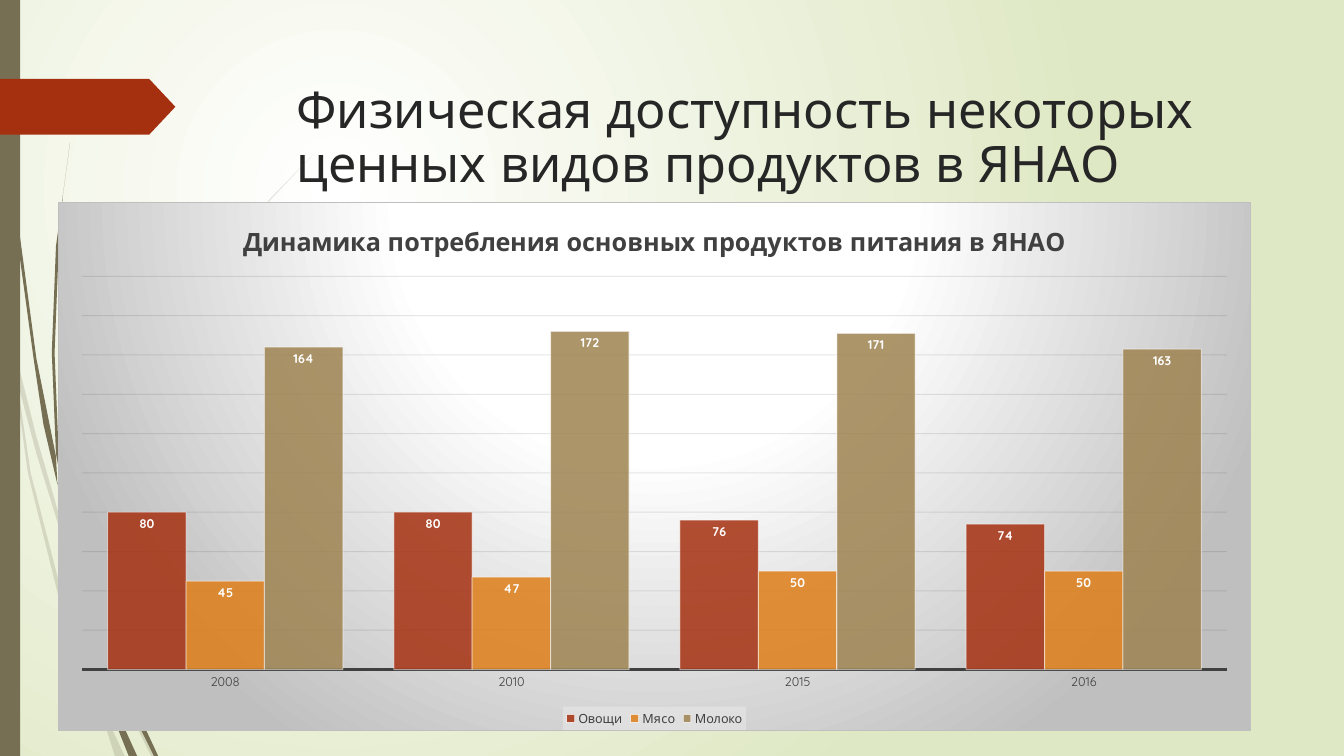
from lxml import etree
from pptx import Presentation
from pptx.chart.data import CategoryChartData
from pptx.dml.color import RGBColor
from pptx.enum.chart import (XL_CHART_TYPE as ChartType, XL_LABEL_POSITION as LabelPos,
                             XL_LEGEND_POSITION as LegendPos, XL_TICK_MARK as TickMark)
from pptx.enum.shapes import MSO_SHAPE as Preset
from pptx.enum.text import MSO_ANCHOR as Anchor, MSO_AUTO_SIZE as AutoSize, PP_ALIGN as Align
from pptx.oxml import parse_xml
from pptx.oxml.ns import nsdecls, qn
from pptx.util import Pt

FONT = "Quicksand"
COLORS = {
    "white": "FFFFFF", "meadow": "DFE8C4", "stem": "766F54", "arrow": "A53010",
    "title": "262626", "text": "404040", "grid": "0D0D0D", "panel": "BFBFBF",
    "legend": "F2F2F2", "vegetables": "A53010", "meat": "DE7E18", "milk": "9F8351",
}
YEARS = ["2008", "2010", "2015", "2016"]
PRODUCTS = [
    ("Овощи", (80, 80, 76, 74), "vegetables"),
    ("Мясо", (45, 47, 50, 50), "meat"),
    ("Молоко", (164, 172, 171, 163), "milk"),
]
PALE_STEMS = [
    [(0, 203), (6.5, 232), (8, 252), (0, 215)],
    [(10, 248), (26, 312), (44.5, 374), (61, 422), (60.5, 431), (42, 376), (26, 323.5),
     (12, 271)],
    [(63.5, 429), (66, 437), (91.5, 498), (111.5, 540), (108, 540), (88.5, 500),
     (63.5, 439)],
    [(8, 252), (12, 271), (22, 338), (50.5, 446), (67, 492), (72.5, 514), (66, 499),
     (47, 447), (20, 338)],
    [(60.5, 431), (63.5, 439), (65.5, 465), (74, 508), (89, 540), (82, 540), (67, 492)],
    [(61, 422), (77, 332), (114, 250.5), (164, 175.5), (193, 142), (224.5, 110),
     (193, 142.6), (165, 176.5), (115, 251.5), (79, 332.5), (63.5, 420.5)],
]
DARK_STEMS = [
    [(2.5, 0), (2.9, 34.5), (5.8, 78.5), (13.7, 167), (26, 255.5), (39.6, 326),
     (41, 346), (31, 303), (23.8, 255.5), (12.2, 168), (5, 79), (2.2, 0)],
    [(79, 461.5), (81.5, 467.5), (98, 508.5), (113, 540), (109.5, 540), (95, 510),
     (80, 472.5)],
    [(41, 343.5), (46, 363.5), (52, 400.5), (70.5, 473), (79, 497.5), (84, 520),
     (80, 510), (67, 474.5), (49, 401)],
    [(43, 340), (41.8, 326), (38.9, 251.5), (41.8, 176.5), (45.4, 139), (50.4, 101.5),
     (44.6, 139), (40.3, 176.5), (37.4, 251.5), (39.6, 323.5)],
    [(76.3, 464.5), (80, 472.5), (87.8, 517.5), (98, 540), (91.5, 540), (84, 520),
     (79, 497.5)],
]


def rgb(name):
    return RGBColor.from_string(COLORS[name])


def paint(fill, color):
    fill.solid()
    fill.fore_color.rgb = rgb(color)


def set_opacity(element, percent):
    for color in element.iter(qn("a:srgbClr")):
        etree.SubElement(color, qn("a:alpha"), val=str(percent * 1000))


def style_font(font, **values):
    font.name = FONT
    font.color.rgb = rgb(values.pop("color"))
    for name, value in values.items():
        setattr(font, name, value)


def radial_gradient(stops, focus):
    """Circular a:gradFill; focus holds left, top, right, bottom in percent."""
    colors = "".join(f'<a:gs pos="{at * 1000}"><a:srgbClr val="{COLORS[name]}"/></a:gs>'
                     for at, name in stops)
    sides = " ".join(f'{side}="{value * 1000}"' for side, value in zip("ltrb", focus))
    return (f'<a:gradFill {nsdecls("a")} rotWithShape="1"><a:gsLst>{colors}</a:gsLst>'
            f'<a:path path="circle"><a:fillToRect {sides}/></a:path></a:gradFill>')


def fill_background(slide):
    paint(slide.background.fill, "white")
    solid = next(slide.element.iter(qn("p:bgPr"))).find(qn("a:solidFill"))
    gradient = radial_gradient([(0, "white"), (100, "meadow")], (50, 50, 100, 100))
    solid.getparent().replace(solid, parse_xml(gradient))


def finish(shape, color, opacity=100):
    shape.shadow.inherit = False
    paint(shape.fill, color)
    shape.line.fill.background()
    if opacity < 100:
        set_opacity(shape.element.spPr, opacity)


def draw_side_decor(slide, left, top, height):
    shapes = slide.shapes
    for stems, opacity in ((PALE_STEMS, 20), (DARK_STEMS, 100)):
        for (start_x, start_y), *outline in stems:
            builder = shapes.build_freeform(start_x, start_y, scale=Pt(1))
            builder.add_line_segments(outline, close=True)
            finish(builder.convert_to_shape(Pt(left), Pt(top)), "stem", opacity)
    bar = shapes.add_shape(Preset.RECTANGLE, Pt(left), Pt(top), Pt(14.4), Pt(height))
    finish(bar, "stem")
    arrow = shapes.add_shape(Preset.PENTAGON, Pt(left), Pt(top + 56.4), Pt(125.3), Pt(39.8))
    arrow.adjustments[0] = 0.47
    finish(arrow, "arrow")


def write_title(slide, left, top, width, height):
    title = slide.shapes.title
    for side, value in dict(left=left, top=top, width=width, height=height).items():
        setattr(title, side, Pt(value))
    frame = title.text_frame
    frame.text = "Физическая доступность некоторых ценных видов продуктов в ЯНАО"
    for name, value in dict(word_wrap=True, auto_size=AutoSize.NONE,
                            vertical_anchor=Anchor.MIDDLE).items():
        setattr(frame, name, value)
    heading = frame.paragraphs[0]
    heading.alignment = Align.LEFT
    heading.line_spacing = 0.9
    style_font(heading.runs[0].font, size=Pt(36), color="title")


def style_axes(chart):
    years, amounts = chart.category_axis, chart.value_axis
    years.major_tick_mark = TickMark.NONE
    style_font(years.tick_labels.font, size=Pt(9), color="text")
    years.format.line.width = Pt(1.5)
    years.format.line.color.rgb = rgb("text")
    for name, value in dict(minimum_scale=0, maximum_scale=200, major_unit=20,
                            has_major_gridlines=True, visible=False).items():
        setattr(amounts, name, value)
    grid = amounts.major_gridlines.format.line
    grid.width = Pt(0.75)
    grid.color.rgb = rgb("grid")
    set_opacity(next(chart.element.iter(qn("c:majorGridlines"))), 10)


def style_bars(chart):
    plot = chart.plots[0]
    plot.gap_width, plot.overlap, plot.vary_by_categories = 65, 0, False
    series_xml = list(chart.element.iter(qn("c:ser")))
    for bars, bars_xml, (_, _, color) in zip(plot.series, series_xml, PRODUCTS):
        paint(bars.format.fill, color)
        look = bars_xml.find(qn("c:spPr"))
        set_opacity(look, 85)
        outline = bars.format.line
        outline.width = Pt(0.75)
        outline.color.rgb = rgb("white")
        set_opacity(look.find(qn("a:ln")), 50)
        labels = bars.data_labels
        labels.show_value = True
        labels.position = LabelPos.INSIDE_END
        style_font(labels.font, size=Pt(9), bold=True, color="white")


def style_panel(chart):
    """Backdrop of the chart and its legend, and the place of the plot."""
    backdrop = radial_gradient([(0, "white"), (39, "white"), (100, "panel")],
                               (50, -80, 50, 180))
    chart.element.find(qn("c:chart")).addnext(parse_xml(
        f'<c:spPr {nsdecls("c", "a")}>{backdrop}<a:ln w="9525"><a:solidFill>'
        f'<a:srgbClr val="{COLORS["panel"]}"/></a:solidFill></a:ln></c:spPr>'))
    legend_fill = parse_xml(
        f'<c:spPr {nsdecls("c", "a")}><a:solidFill><a:srgbClr val="{COLORS["legend"]}"/>'
        '</a:solidFill></c:spPr>')
    set_opacity(legend_fill, 39)
    next(chart.element.iter(qn("c:legend"))).find(qn("c:txPr")).addprevious(legend_fill)
    plot_area = next(chart.element.iter(qn("c:plotArea")))
    for layout in plot_area.findall(qn("c:layout")):
        plot_area.remove(layout)
    place = [("layoutTarget", "inner"), ("xMode", "edge"), ("yMode", "edge"),
             ("x", 0.02), ("y", 0.14), ("w", 0.96), ("h", 0.745)]
    parts = "".join(f'<c:{name} val="{value}"/>' for name, value in place)
    plot_area.insert(0, parse_xml(f'<c:layout {nsdecls("c")}><c:manualLayout>{parts}'
                                  '</c:manualLayout></c:layout>'))


def add_consumption_chart(slide, left, top, width, height):
    data = CategoryChartData()
    data.categories = YEARS
    for name, amounts, _ in PRODUCTS:
        data.add_series(name, amounts)
    chart = slide.shapes.add_chart(ChartType.COLUMN_CLUSTERED, Pt(left), Pt(top),
                                   Pt(width), Pt(height), data).chart
    style_font(chart.font, size=Pt(10), color="text")
    heading = chart.chart_title.text_frame
    heading.text = "Динамика потребления основных продуктов питания в ЯНАО"
    style_font(heading.paragraphs[0].runs[0].font, size=Pt(18), bold=True, color="text")
    chart.has_legend = True
    chart.legend.position = LegendPos.BOTTOM
    chart.legend.include_in_layout = False
    style_font(chart.legend.font, size=Pt(9), color="text")
    style_axes(chart)
    style_bars(chart)
    style_panel(chart)


def main():
    deck = Presentation()
    deck.slide_width, deck.slide_height = Pt(960), Pt(540)
    slide = deck.slides.add_slide(deck.slide_layouts[5])
    fill_background(slide)
    draw_side_decor(slide, 0, 0, 540)
    write_title(slide, 204.5, 49, 702, 100.8)
    add_consumption_chart(slide, 41.3, 144.3, 852.5, 377.7)
    deck.save("out.pptx")


if __name__ == "__main__":
    main()
